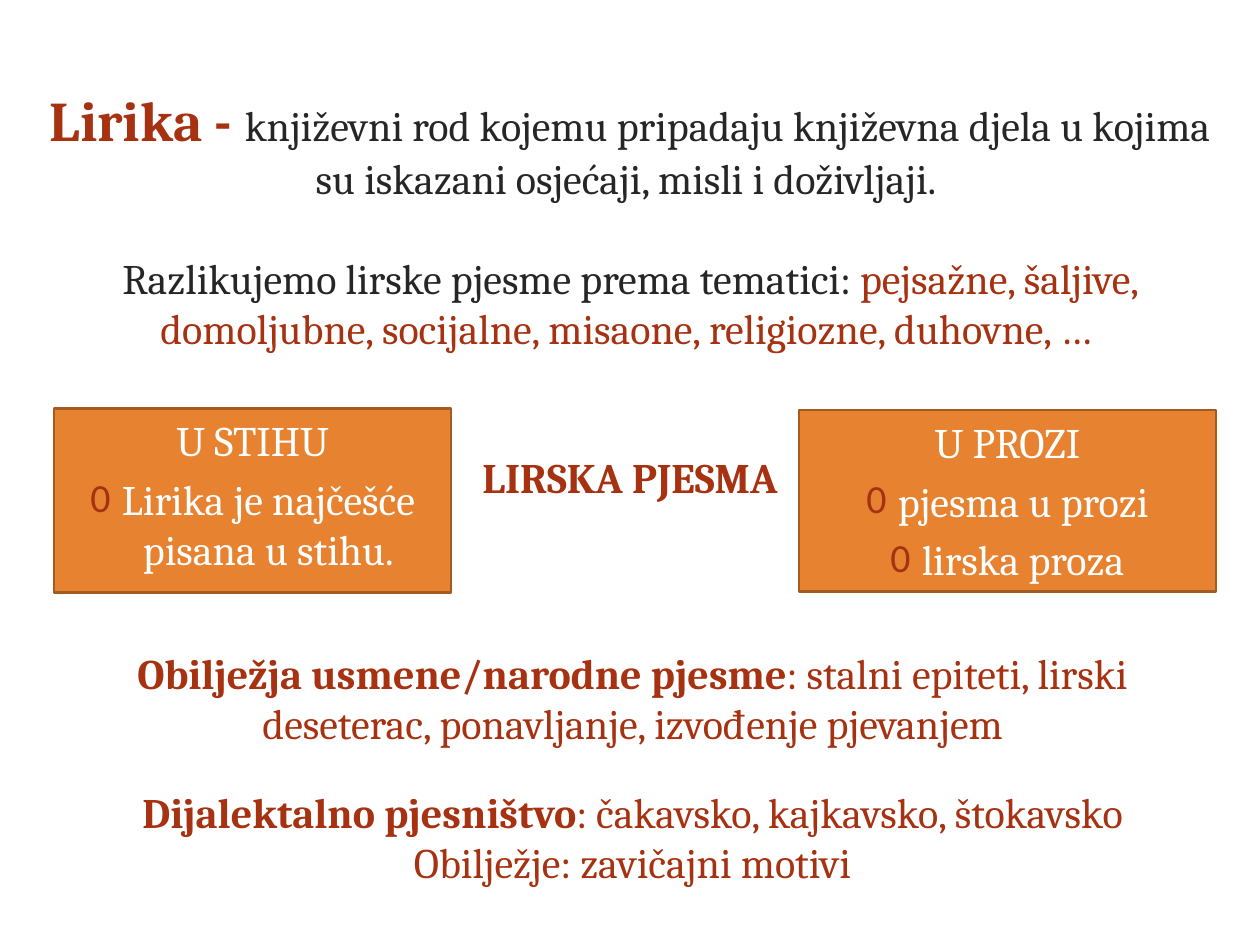
from lxml import etree
from pptx import Presentation
from pptx import util as u
from pptx.dml.color import RGBColor
from pptx.enum import shapes, text
from pptx.oxml.ns import qn

COLORS = {"rust": "A63212", "ink": "262626", "orange": "E68230",
          "edge": "A25C22", "white": "FFFFFF"}
FONT = "Cambria"
SIZE = 24
W, H = u.Inches(10), u.Inches(7.5)


def rgb(name):
    return RGBColor.from_string(COLORS[name])


def place(box):
    x, y, w, h = box
    return [int(W * x / 100), int(H * y / 100), int(W * w / 100), int(H * h / 100)]


def add_run(p, words, color="rust", bold=False, size=SIZE):
    r = p.add_run()
    r.text = words
    r.font.name, r.font.size, r.font.bold = FONT, u.Pt(size), bold
    r.font.color.rgb = rgb(color)


def add_paragraph(tf, runs, first=False, before=0):
    p = tf.paragraphs[0] if first else tf.add_paragraph()
    p.alignment = text.PP_ALIGN.CENTER
    if before and not first:
        p.space_before = u.Pt(before)
    for run in runs:
        add_run(p, *run)
    return p


def add_bullet(p):
    pPr = p._p.get_or_add_pPr()
    pPr.set("marL", str(u.Inches(0.25)))
    pPr.set("indent", str(-u.Inches(0.25)))
    clr = etree.SubElement(pPr, qn("a:buClr"))
    etree.SubElement(clr, qn("a:srgbClr"), val=COLORS["rust"])
    etree.SubElement(pPr, qn("a:buSzPct"), val="95000")
    etree.SubElement(pPr, qn("a:buFont"), typeface="Calibri")
    etree.SubElement(pPr, qn("a:buChar"), char="0")


def build_title(s, box):
    sp = s.shapes.title
    sp.left, sp.top, sp.width, sp.height = place(box)
    tf = sp.text_frame
    tf.word_wrap = True
    tf.auto_size = text.MSO_AUTO_SIZE.NONE
    tf.vertical_anchor = text.MSO_ANCHOR.MIDDLE
    add_paragraph(tf, [
        ("Lirika - ", "rust", True, 32),
        ("književni rod kojemu pripadaju književna djela u kojima "
         "su iskazani osjećaji, misli i doživljaji. ", "ink")], first=True)
    add_paragraph(tf, [
        ("Razlikujemo lirske pjesme prema tematici: ", "ink"),
        ("pejsažne, šaljive, domoljubne, socijalne, misaone, "
         "religiozne, duhovne, … ",)], before=28)
    add_paragraph(tf, [("LIRSKA PJESMA", "rust", True)], before=56)


def build_card(s, box, heading, items):
    sp = s.shapes.add_shape(shapes.MSO_SHAPE.RECTANGLE, *place(box))
    sp.shadow.inherit = False
    sp.fill.solid()
    sp.fill.fore_color.rgb = rgb("orange")
    sp.line.color.rgb = rgb("edge")
    sp.line.width = u.Pt(1.5)
    tf = sp.text_frame
    tf.word_wrap = True
    tf.vertical_anchor = text.MSO_ANCHOR.TOP
    add_paragraph(tf, [(heading, "white")], first=True)
    for item in items:
        add_bullet(add_paragraph(tf, [(item, "white")], before=0.2 * SIZE))


def build_note(s, box, paragraphs):
    tf = s.shapes.add_textbox(*place(box)).text_frame
    tf.word_wrap = True
    for i, runs in enumerate(paragraphs):
        add_paragraph(tf, runs, first=i == 0)


def main():
    prs = Presentation()
    prs.slide_width, prs.slide_height = W, H
    s = prs.slides.add_slide(prs.slide_layouts[5])
    build_title(s, (1.2, 6.93, 97.6, 48.27))
    build_card(s, (4.3, 43.2, 31.5, 19.47), "U STIHU",
               ["Lirika je najčešće pisana u stihu."])
    build_card(s, (63.4, 43.4, 33.1, 19.2), "U PROZI",
               ["pjesma u prozi", "lirska proza"])
    build_note(s, (6.1, 67.87, 88.2, 12.13), [
        [("Obilježja usmene/narodne pjesme", "rust", True),
         (": stalni epiteti, lirski deseterac, ponavljanje, izvođenje pjevanjem",)]])
    build_note(s, (6.1, 82.53, 88.2, 12.13), [
        [("Dijalektalno pjesništvo", "rust", True),
         (": čakavsko, kajkavsko, štokavsko",)],
        [("Obilježje: zavičajni motivi",)]])
    prs.save("out.pptx")


if __name__ == "__main__":
    main()
